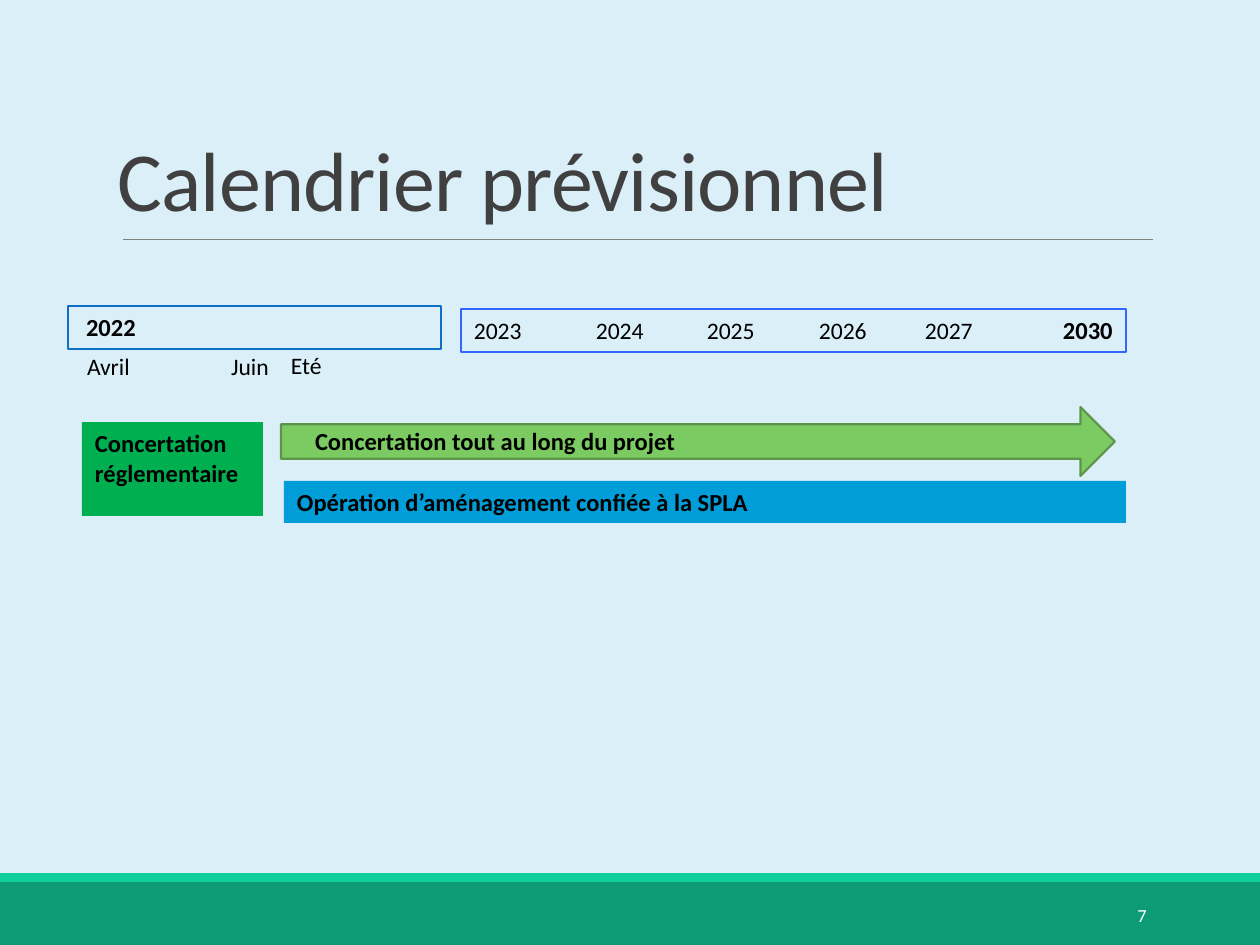
from pptx import Presentation
from pptx.dml.color import RGBColor
from pptx.enum.shapes import MSO_CONNECTOR, MSO_SHAPE
from pptx.enum.text import MSO_ANCHOR, MSO_AUTO_SIZE, PP_ALIGN
from pptx.oxml.ns import qn
from pptx.util import Emu, Pt

BLACK = RGBColor(0x00, 0x00, 0x00)
WHITE = RGBColor(0xFF, 0xFF, 0xFF)
DARK_GREY = RGBColor(0x40, 0x40, 0x40)
RULE_GREY = RGBColor(0x80, 0x80, 0x80)
PALE_BLUE = RGBColor(0xDB, 0xEF, 0xF9)
BAND_GREEN = RGBColor(0x0C, 0x9B, 0x74)
BAND_LIGHT = RGBColor(0x10, 0xCF, 0x9B)
ARROW_GREEN = RGBColor(0x7C, 0xCA, 0x62)
ARROW_EDGE = RGBColor(0x5C, 0x95, 0x49)
CONSULT_GREEN = RGBColor(0x00, 0xB0, 0x50)
OPERATION_BLUE = RGBColor(0x00, 0x9D, 0xD9)
YEAR_EDGE = RGBColor(0x0F, 0x6F, 0xC6)
YEARS_EDGE = RGBColor(0x33, 0x66, 0xFF)

FONT = "Calibri"
INSET = 13
RECT = MSO_SHAPE.RECTANGLE
ARROW = MSO_SHAPE.RIGHT_ARROW

# preset, (left, top, width, height) in px, fill, edge colour, edge width in pt
BANDS = [
    (RECT, (0, 882, 1260, 63), BAND_GREEN, None, 0),
    (RECT, (0, 873, 1260, 9), BAND_LIGHT, None, 0),
    (ARROW, (281, 407, 834, 69), ARROW_GREEN, ARROW_EDGE, 1.25),
]

# box in px, fill, edge, left inset, size in pt, bold,
# texts as (words, tab position in px from the inset)
ENTRIES = [
    ((68, 306, 373, 43), None, YEAR_EDGE, 18, 14, True, [("2022", 0)]),
    ((461, 309, 665, 43), None, YEARS_EDGE, INSET, 13.5, False,
     [("2023", 0), ("2024", 122), ("2025", 233), ("2026", 345),
      ("2027", 451), ("2030", 589)]),
    ((74, 346, 207, 42), None, None, INSET, 13.5, False,
     [("Avril", 0), ("Juin", 144)]),
    ((278, 345, 132, 42), None, None, INSET, 13.5, False, [("Eté", 0)]),
    ((82, 422, 181, 94), CONSULT_GREEN, None, INSET, 14, True,
     [("Concertation réglementaire", 0)]),
    ((302, 420, 512, 43), None, None, INSET, 14, True,
     [("Concertation tout au long du projet", 0)]),
    ((284, 481, 842, 42), OPERATION_BLUE, None, INSET, 14, True,
     [("Opération d’aménagement confiée à la SPLA", 0)]),
]
FINAL_YEAR = "2030"


def px(length):
    return Emu(round(length * 914400 / 126))


def set_font(font, size, color, bold=False):
    font.name, font.size, font.bold = FONT, Pt(size), bold
    font.color.rgb = color


def add_block(shapes, preset, box, fill, edge, edge_width):
    block = shapes.add_shape(preset, *map(px, box))
    block.shadow.inherit = False
    if fill is None:
        block.fill.background()
    else:
        block.fill.solid()
        block.fill.fore_color.rgb = fill
    if edge is None:
        block.line.fill.background()
    else:
        block.line.color.rgb = edge
        block.line.width = Pt(edge_width)
    return block


def add_tab_stops(paragraph, positions):
    tabs = paragraph._p.get_or_add_pPr().makeelement(qn("a:tabLst"), {})
    for position in positions:
        tabs.append(tabs.makeelement(
            qn("a:tab"), {"pos": str(px(position)), "algn": "l"}))
    paragraph._p.get_or_add_pPr().append(tabs)


def add_entry(shapes, box, fill, edge, inset, size, bold, texts):
    if fill is None and edge is None:
        entry = shapes.add_textbox(*map(px, box))
    else:
        entry = add_block(shapes, RECT, box, fill, edge, 0.75)
    frame = entry.text_frame
    frame.word_wrap = True
    frame.vertical_anchor = MSO_ANCHOR.TOP
    frame.margin_left = px(inset)
    paragraph = frame.paragraphs[0]
    paragraph.alignment = PP_ALIGN.LEFT
    if len(texts) > 1:
        add_tab_stops(paragraph, [position for _, position in texts[1:]])
    set_font(paragraph.font, size, BLACK, bold)
    for words, position in texts:
        run = paragraph.add_run()
        run.text = f"\t{words}" if position else words
        if words == FINAL_YEAR:
            set_font(run.font, 14, BLACK, True)


def format_title(title):
    title.left, title.top, title.width, title.height = map(
        px, (105, 35, 1040, 200))
    frame = title.text_frame
    frame.text = "Calendrier prévisionnel"
    frame.word_wrap = True
    frame.auto_size = MSO_AUTO_SIZE.NONE
    frame.vertical_anchor = MSO_ANCHOR.BOTTOM
    paragraph = frame.paragraphs[0]
    paragraph.alignment = PP_ALIGN.LEFT
    paragraph.line_spacing = 0.85
    set_font(paragraph.font, 48, DARK_GREY)
    paragraph.runs[0]._r.get_or_add_rPr().set("spc", "-50")


def add_title_rule(shapes):
    rule = shapes.add_connector(
        MSO_CONNECTOR.STRAIGHT, px(123), px(239), px(1153), px(239))
    rule.line.color.rgb = RULE_GREY
    rule.line.width = Pt(0.5)
    properties = rule._element.spPr
    properties.append(properties.makeelement(qn("a:effectLst"), {}))


def add_page_number(shapes):
    frame = shapes.add_textbox(*map(px, (1023, 890, 136, 50))).text_frame
    frame.word_wrap = True
    frame.vertical_anchor = MSO_ANCHOR.MIDDLE
    paragraph = frame.paragraphs[0]
    paragraph.text = "7"
    paragraph.alignment = PP_ALIGN.RIGHT
    set_font(paragraph.font, 10.5, WHITE)


def main():
    prs = Presentation()
    prs.slide_width, prs.slide_height = px(1260), px(945)
    slide = prs.slides.add_slide(prs.slide_layouts[5])
    slide.background.fill.solid()
    slide.background.fill.fore_color.rgb = PALE_BLUE

    format_title(slide.shapes.title)
    for band in BANDS:
        add_block(slide.shapes, *band)
    add_title_rule(slide.shapes)
    add_page_number(slide.shapes)
    for entry in ENTRIES:
        add_entry(slide.shapes, *entry)
    prs.save("out.pptx")


if __name__ == "__main__":
    main()
